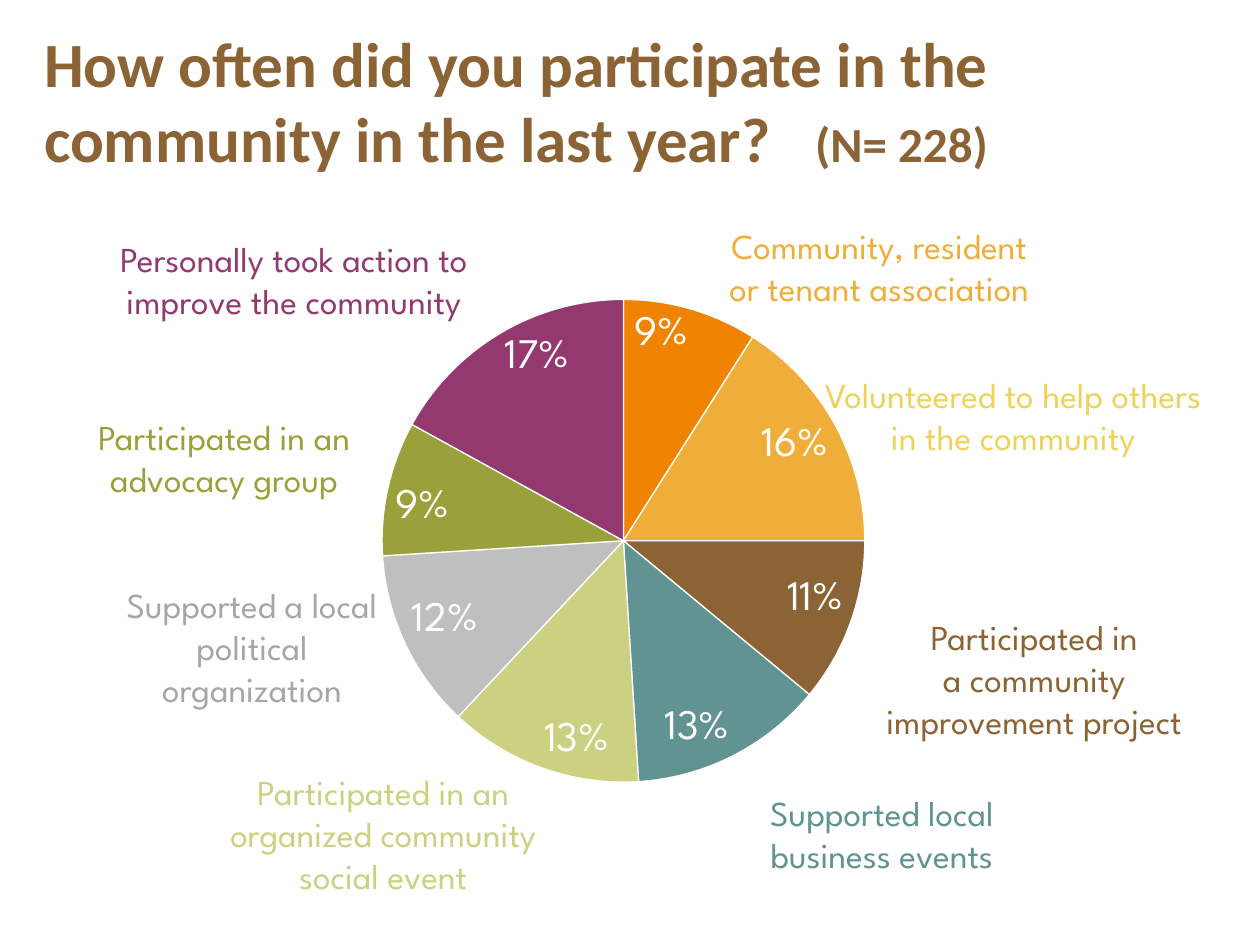
from pptx import Presentation
from pptx.chart.data import CategoryChartData
from pptx.dml.color import RGBColor
from pptx.enum.chart import XL_CHART_TYPE, XL_LABEL_POSITION
from pptx.enum.text import MSO_ANCHOR, MSO_AUTO_SIZE, PP_ALIGN
from pptx.oxml import parse_xml
from pptx.oxml.ns import nsdecls
from pptx.util import Inches, Pt

PIE = XL_CHART_TYPE.PIE
INSIDE_END = XL_LABEL_POSITION.INSIDE_END
MIDDLE, TOP = MSO_ANCHOR.MIDDLE, MSO_ANCHOR.TOP
FIXED, GROW = MSO_AUTO_SIZE.NONE, MSO_AUTO_SIZE.SHAPE_TO_FIT_TEXT
LEFT, CENTER = PP_ALIGN.LEFT, PP_ALIGN.CENTER

TITLE_FONT, LABEL_FONT = "Calibri", "League Spartan"
BROWN, WHITE = "8C6335", "FFFFFF"
GRID = Inches(1 / 12)  # the slide is 120 columns by 90 rows

SLICES = [
    (9, "F08300"), (16, "EFAE3A"), (11, BROWN), (13, "609391"),
    (13, "CBD181"), (12, "BFBFBF"), (9, "9AA13B"), (17, "93396F"),
]

# paragraphs, colour, (column, row, columns, rows)
CALLOUTS = [
    (["Community, resident", "or tenant association"], "EFAE3A", (65, 20.8, 37.5, 9.2)),
    (["Volunteered to help others in the community"], "EED35B", (76, 35, 41, 13.3)),
    (["Participated in", "a community improvement project"], BROWN, (80, 58, 37, 13.3)),
    (["Supported local business events"], "609391", (68, 74.8, 32, 9.2)),
    (["Participated in an organized community social event"], "CBD181", (17, 72.8, 39, 13.3)),
    (["Supported a local political organization"], "A6A6A6", (10, 55, 28, 13.3)),
    (["Participated in an", "advocacy group"], "9AA13B", (4.7, 39, 33.3, 9.2)),
    (["Personally took action to improve the community"], "93396F", (6, 22, 44, 9.2)),
]


def color(hex_value):
    return RGBColor.from_string(hex_value)


def grid_box(*cells):
    """Turn column, row, columns and rows into lengths."""
    return [round(cell * GRID) for cell in cells]


def format_font(font, name, size, hex_value, bold=False):
    font.name, font.size, font.bold = name, Pt(size), bold
    font.color.rgb = color(hex_value)


def add_text(paragraph, text, font=LABEL_FONT, size=20, hex_value=BROWN,
             bold=False, align=CENTER):
    paragraph.alignment = align
    run = paragraph.add_run()
    run.text = text
    format_font(run.font, font, size, hex_value, bold)


def add_title(slide, box):
    title = slide.shapes.title
    title.left, title.top, title.width, title.height = box
    frame = title.text_frame
    frame.word_wrap, frame.auto_size, frame.vertical_anchor = True, FIXED, MIDDLE
    paragraph = frame.paragraphs[0]
    paragraph._p.get_or_add_pPr().append(parse_xml(
        f'<a:tabLst {nsdecls("a")}><a:tab pos="{Inches(6.12)}" algn="l"/></a:tabLst>'))
    style = {"font": TITLE_FONT, "bold": True, "align": LEFT}
    add_text(paragraph, "How often did you participate in the community in the last year?\t",
             size=36, **style)
    add_text(paragraph, "(N= 228)", size=28, **style)


def add_pie(slide, box):
    data = CategoryChartData()
    data.categories = [str(number) for number in range(1, len(SLICES) + 1)]
    data.add_series("Series 1", [value for value, _ in SLICES])
    chart = slide.shapes.add_chart(PIE, *box, data).chart
    chart.has_legend = chart.has_title = False
    format_font(chart.font, TITLE_FONT, 10, "000000")

    plot = chart.plots[0]
    plot.vary_by_categories = True
    for index, (_, hex_value) in enumerate(SLICES):
        point_format = plot.series[0].points[index].format
        point_format.fill.solid()
        point_format.fill.fore_color.rgb = color(hex_value)
        point_format.line.color.rgb = color(WHITE)
        point_format.line.width = Pt(0.75)

    plot.has_data_labels = True
    labels = plot.data_labels
    labels.show_percentage, labels.show_value = True, False
    labels.number_format, labels.number_format_is_linked = "0%", False
    labels.position = INSIDE_END
    format_font(labels.font, LABEL_FONT, 24, WHITE)
    place_plot(chart, x=0.185, y=0.097, w=0.635, h=0.81)


def place_plot(chart, **shares):
    """Fix the plot area as shares of the chart's box."""
    plot_area = chart._chartSpace.chart.plotArea
    for layout in plot_area.findall("{*}layout"):
        plot_area.remove(layout)
    sizes = "".join(f'<c:{key} val="{share}"/>' for key, share in shares.items())
    plot_area.insert(0, parse_xml(
        f'<c:layout {nsdecls("c")}><c:manualLayout><c:layoutTarget val="inner"/>'
        f'<c:xMode val="edge"/><c:yMode val="edge"/>{sizes}</c:manualLayout></c:layout>'))


def add_callout(slide, lines, hex_value, box):
    frame = slide.shapes.add_textbox(*box).text_frame
    frame.word_wrap, frame.auto_size, frame.vertical_anchor = True, GROW, TOP
    for index, line in enumerate(lines):
        paragraph = frame.add_paragraph() if index else frame.paragraphs[0]
        add_text(paragraph, line, hex_value=hex_value)


def main():
    presentation = Presentation()
    presentation.slide_width, presentation.slide_height = Inches(10), Inches(7.5)
    slide = presentation.slides.add_slide(presentation.slide_layouts.get_by_name("Title Only"))
    add_title(slide, grid_box(3, 2, 115, 15))
    add_pie(slide, grid_box(23, 23, 72.4, 56.8))
    for lines, hex_value, cells in CALLOUTS:
        add_callout(slide, lines, hex_value, grid_box(*cells))
    presentation.save("out.pptx")


if __name__ == "__main__":
    main()
